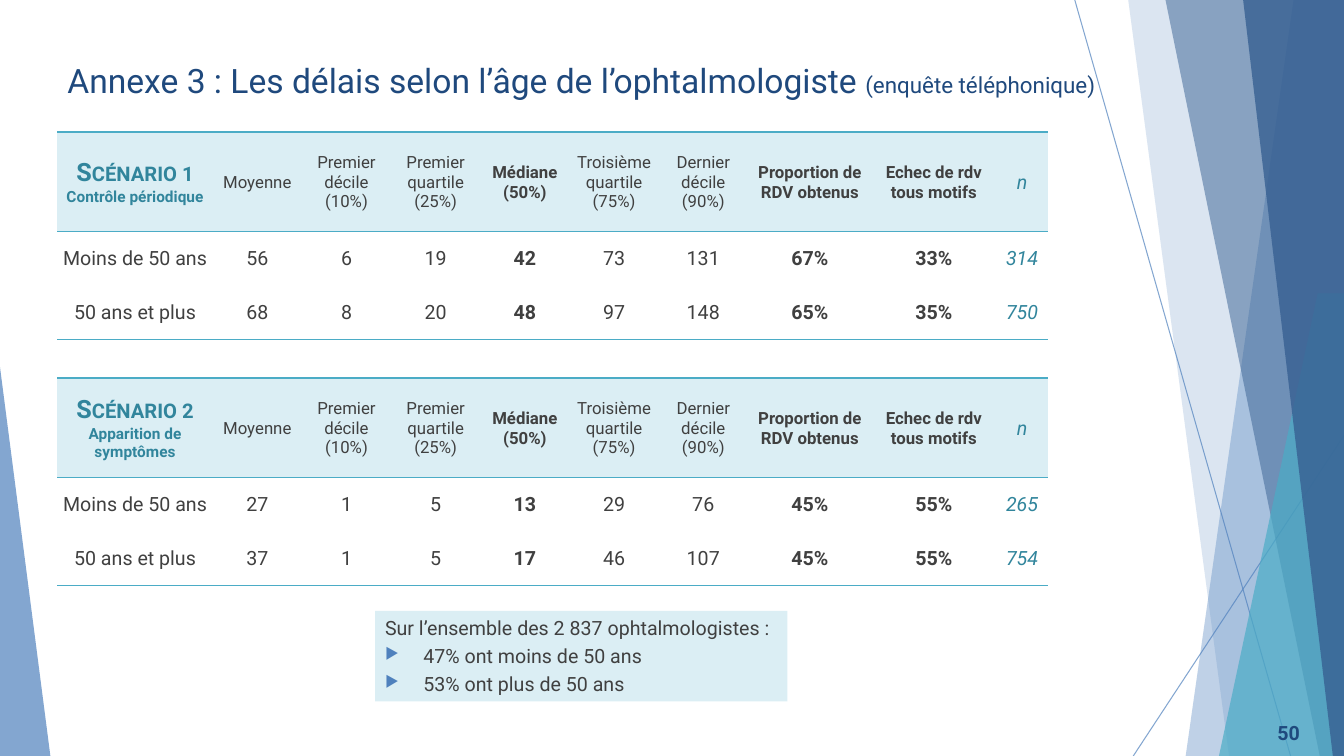
from lxml import etree
from pptx import Presentation
from pptx import util as u
from pptx.dml.color import RGBColor
from pptx.enum import shapes, text
from pptx.oxml.ns import qn

W, H = 13.33, 7.5
FONT = "Roboto"
BLUE = RGBColor(0x4F, 0x81, 0xBD)
DEEP = RGBColor(0x37, 0x60, 0x92)
NAVY = RGBColor(0x1F, 0x49, 0x7D)
AQUA = RGBColor(0x4B, 0xAC, 0xC6)
TEAL = RGBColor(0x31, 0x85, 0x9C)
PALE = RGBColor(0xDB, 0xEE, 0xF4)
GREY = RGBColor(0x40, 0x40, 0x40)

TITLE = [("Annexe 3 : Les délais selon l’âge de l’ophtalmologiste ", 24), ("(enquête téléphonique)", 16)]
HEADINGS = ["Moyenne", "Premier décile (10%)", "Premier quartile\n(25%)", "Médiane\n(50%)",
            "Troisième quartile (75%)", "Dernier décile (90%)", "Proportion de RDV obtenus",
            "Echec de rdv tous motifs", "n"]
SCENARIOS = [
    ("Scénario 1\nContrôle périodique", [
        ["Moins de 50 ans", "56", "6", "19", "42", "73", "131", "67%", "33%", "314"],
        ["50 ans et plus", "68", "8", "20", "48", "97", "148", "65%", "35%", "750"]]),
    ("Scénario 2\nApparition de symptômes", [
        ["Moins de 50 ans", "27", "1", "5", "13", "29", "76", "45%", "55%", "265"],
        ["50 ans et plus", "37", "1", "5", "17", "46", "107", "45%", "55%", "754"]]),
]
NOTE = ["Sur l’ensemble des 2 837 ophtalmologistes :", "47% ont moins de 50 ans", "53% ont plus de 50 ans"]
PAGE = "50"

RAYS = [((10.66, 0), (12.8, H)), ((W, 4.32), (11.24, H))]
FACETS = [
    ([(12.83, 0), (W, 0), (W, H), (11.76, H)], BLUE, 36),
    ([(11.19, 0), (W, 0), (W, H), (12.19, H)], BLUE, 20),
    ([(11.56, 0), (W, 0), (W, H), (13.09, H)], DEEP, 50),
    ([(13.07, 2.91), (W, 2.91), (W, H), (12.09, H)], AQUA, 70),
    ([(12.33, 0), (W, 0), (W, H), (13.22, H)], DEEP, 80),
]

LEFT, TOP, PITCH = 0.57, 1.31, 2.44
TABLE_W, TABLE_H, HEAD_H = 9.83, 2.06, 0.99
LABEL_W, SHARE_W, COUNT_W = 1.54, 1.23, 0.52
DELAY_W = (TABLE_W - LABEL_W - 2 * SHARE_W - COUNT_W) / 6
COLS = [LABEL_W] + [DELAY_W] * 6 + [SHARE_W] * 2 + [COUNT_W]
ROWS = [HEAD_H] + [(TABLE_H - HEAD_H) / 2] * 2
BOLD_COLS, LAST = (4, 7, 8), len(COLS) - 1
PLAIN_STYLE = "{2D5ABB26-0587-4C30-8999-92F81FD0307C}"


def inches(*values):
    return [u.Inches(v) for v in values]


def fade(element, percent):
    for clr in element.iter(qn("a:srgbClr")):
        etree.SubElement(clr, qn("a:alpha"), val=str(percent * 1000))


def paint(sp, color, percent=100):
    sp.shadow.inherit = False
    sp.fill.solid()
    sp.fill.fore_color.rgb = color
    sp.line.fill.background()
    if percent < 100:
        fade(sp.fill._xPr, percent)


def style(p, size, color, bold=False, italic=False):
    for r in p.runs:
        f = r.font
        f.name, f.size, f.bold, f.italic = FONT, u.Pt(size), bold, italic
        f.color.rgb = color


def add_rays_and_facets(sl):
    for start, end in RAYS:
        ray = sl.shapes.add_connector(shapes.MSO_CONNECTOR.STRAIGHT, *inches(*start, *end))
        ray.line.color.rgb, ray.line.width = BLUE, u.Pt(0.75)
        fade(ray.line._ln, 70)
        etree.SubElement(ray._element.spPr, qn("a:effectLst"))
    for points, color, percent in FACETS:
        corners = [inches(*pt) for pt in points]
        builder = sl.shapes.build_freeform(*corners[0])
        builder.add_line_segments(corners[1:], close=True)
        paint(builder.convert_to_shape(), color, percent)
    wedge = sl.shapes.add_shape(shapes.MSO_SHAPE.ISOSCELES_TRIANGLE, *inches(0, 3.64, 0.5, 3.86))
    wedge.adjustments[0] = 0
    paint(wedge, BLUE, 70)


def add_box(sl, *place):
    box = sl.shapes.add_textbox(*inches(*place))
    box.text_frame.word_wrap = True
    return box.text_frame


def rule(cell, *sides):
    for side in sides:
        ln = etree.SubElement(cell._tc.get_or_add_tcPr(), qn("a:ln" + side), w=str(u.Pt(1)))
        fill = etree.SubElement(ln, qn("a:solidFill"))
        etree.SubElement(fill, qn("a:srgbClr"), val=str(AQUA))


def cell_format(row, col, line):
    if row == 0 and col == 0:
        return (11 if line else 18), TEAL, True, False
    if col == LAST:
        return 14, TEAL, False, True
    return (14 if row else 12), GREY, col in BOLD_COLS, False


def add_scenario(sl, top, name, rows):
    frame = sl.shapes.add_table(len(ROWS), len(COLS), *inches(LEFT, top, TABLE_W, TABLE_H))
    tbl = frame.table
    tbl.horz_banding = False
    tbl._tbl.tblPr.find(qn("a:tableStyleId")).text = PLAIN_STYLE
    for column, width in zip(tbl.columns, COLS):
        column.width = u.Inches(width)
    for line, height in zip(tbl.rows, ROWS):
        line.height = u.Inches(height)
    for i, values in enumerate([[name] + HEADINGS] + rows):
        for j, value in enumerate(values):
            cell = tbl.cell(i, j)
            cell.text_frame.text = value
            cell.vertical_anchor = text.MSO_ANCHOR.MIDDLE
            cell.margin_left = cell.margin_right = cell.margin_top = u.Inches(0.01)
            cell.margin_bottom = 0
            for k, p in enumerate(cell.text_frame.paragraphs):
                p.alignment = text.PP_ALIGN.CENTER
                style(p, *cell_format(i, j, k))
            rule(cell, *(("T", "B"), (), ("B",))[i])
            if i == 0:
                cell.fill.solid()
                cell.fill.fore_color.rgb = PALE
            else:
                cell.fill.background()
    tbl.cell(0, 0).text_frame.paragraphs[0].runs[0].font._element.set("cap", "small")


def add_bullet(p):
    pPr = p._p.get_or_add_pPr()
    pPr.set("marL", str(u.Inches(0.38)))
    pPr.set("indent", str(-u.Inches(0.38)))
    clr = etree.SubElement(pPr, qn("a:buClr"))
    etree.SubElement(clr, qn("a:srgbClr"), val=str(BLUE))
    etree.SubElement(pPr, qn("a:buSzPct"), val="80000")
    etree.SubElement(pPr, qn("a:buChar"), char="▶")


def add_note(sl):
    sp = sl.shapes.add_shape(shapes.MSO_SHAPE.RECTANGLE, *inches(3.72, 6.06, 4.09, 0.9))
    paint(sp, PALE)
    tf = sp.text_frame
    tf.word_wrap = True
    tf.vertical_anchor = text.MSO_ANCHOR.TOP
    tf.text = "\n".join(NOTE)
    for i, p in enumerate(tf.paragraphs):
        p.alignment = text.PP_ALIGN.LEFT
        if i:
            p.line_spacing = 1.2
            add_bullet(p)
        style(p, 14, GREY)


def main():
    prs = Presentation()
    prs.slide_width, prs.slide_height = inches(W, H)
    sl = prs.slides.add_slide(prs.slide_layouts[6])
    add_rays_and_facets(sl)

    p = add_box(sl, LEFT, 0.54, 10.83, 0.69).paragraphs[0]
    for words, size in TITLE:
        r = p.add_run()
        r.text = words
    style(p, 24, NAVY)
    for r, (words, size) in zip(p.runs, TITLE):
        r.font.size = u.Pt(size)

    add_note(sl)
    for i, (name, rows) in enumerate(SCENARIOS):
        add_scenario(sl, TOP + i * PITCH, name, rows)

    tf = add_box(sl, 12.24, 7.07, 0.75, 0.4)
    tf.vertical_anchor = text.MSO_ANCHOR.MIDDLE
    tf.text = PAGE
    tf.paragraphs[0].alignment = text.PP_ALIGN.RIGHT
    style(tf.paragraphs[0], 14, NAVY, True)
    prs.save("out.pptx")


if __name__ == "__main__":
    main()
